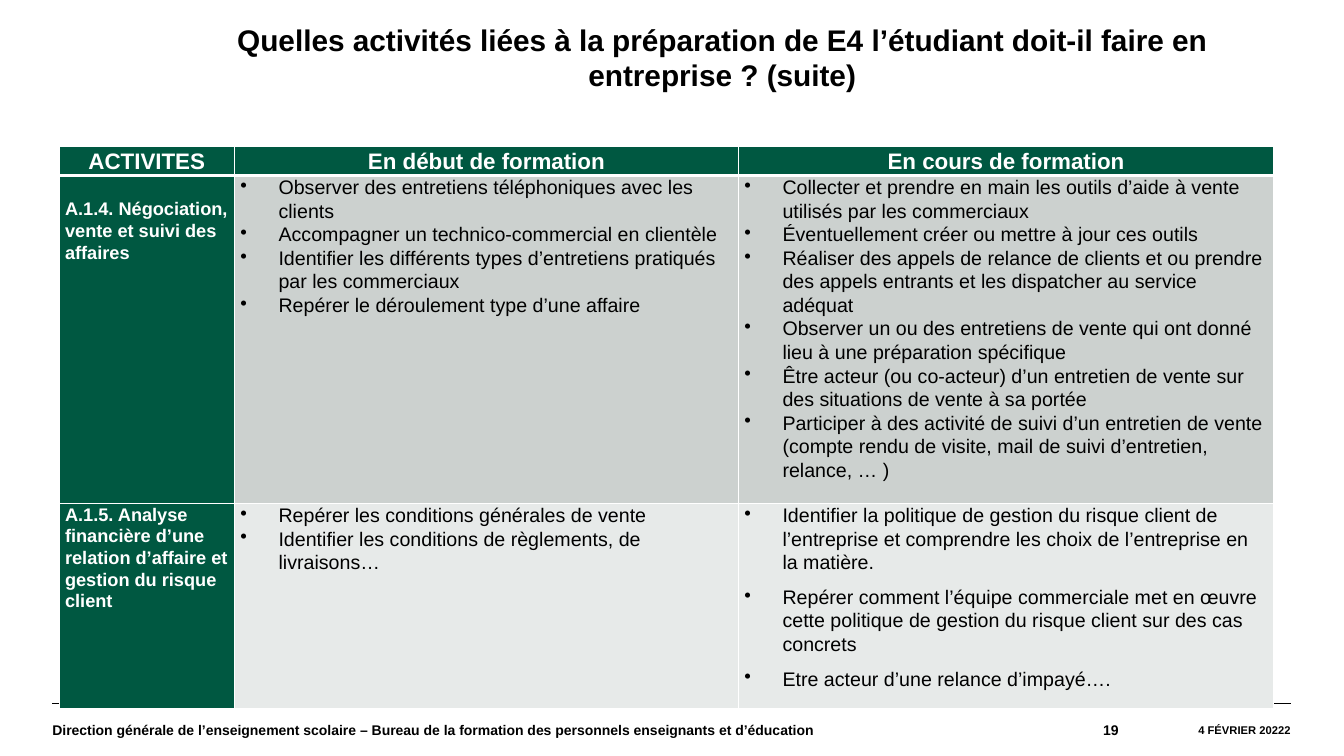
import pptx
import pptx.util
import pptx.dml.color
import pptx.enum.shapes
import pptx.enum.text
import pptx.oxml
import pptx.oxml.ns
from pptx.util import Cm

COLORS = {
    "black": "000000",
    "white": "FFFFFF",
    "green": "005841",
    "row_dark": "CCD1CF",
    "row_light": "E7EAE9",
}
ALIGN = pptx.enum.text.PP_ALIGN
ANCHOR = pptx.enum.text.MSO_ANCHOR

TITLE = (
    "Quelles activités liées à la préparation de E4 l’étudiant "
    "doit-il faire en entreprise ? (suite)"
)
FOOTER = (
    "Direction générale de l’enseignement scolaire – "
    "Bureau de la formation des personnels enseignants et d’éducation"
)
HEADINGS = ["ACTIVITES", "En début de formation", "En cours de formation"]
NEGOTIATION_START = [
    "Observer des entretiens téléphoniques avec les clients",
    "Accompagner un technico-commercial en clientèle",
    "Identifier les différents types d’entretiens pratiqués par les commerciaux",
    "Repérer le déroulement type d’une affaire",
]
NEGOTIATION_DURING = [
    "Collecter et prendre en main les outils d’aide à vente utilisés par les commerciaux",
    "Éventuellement créer ou mettre à jour ces outils",
    "Réaliser des appels de relance de clients et ou prendre des appels entrants "
    "et les dispatcher au service adéquat",
    "Observer un ou des entretiens de vente qui ont donné lieu à une préparation spécifique",
    "Être acteur (ou co-acteur) d’un entretien de vente sur des situations de vente à sa portée",
    "Participer à des activité de suivi d’un entretien de vente "
    "(compte rendu de visite, mail de suivi d’entretien, relance, … )",
]
RISK_START = [
    "Repérer les conditions générales de vente",
    "Identifier les conditions de règlements, de livraisons…",
]
RISK_DURING = [
    "Identifier la politique de gestion du risque client de l’entreprise "
    "et comprendre les choix de l’entreprise en la matière.",
    "Repérer comment l’équipe commerciale met en œuvre cette politique "
    "de gestion du risque client sur des cas concrets",
    "Etre acteur d’une relance d’impayé….",
]
ACTIVITIES = [
    ("A.1.4. Négociation, vente et suivi des affaires",
     NEGOTIATION_START, NEGOTIATION_DURING, 0, "row_dark", 0.57),
    ("A.1.5. Analyse financière d’une relation d’affaire et gestion du risque client",
     RISK_START, RISK_DURING, 8, "row_light", 0),
]


def rgb(color):
    return pptx.dml.color.RGBColor.from_string(COLORS[color])


def format_spans(para, size, color, bold):
    for span in para.runs:
        span.font.name = "Arial"
        span.font.size = pptx.util.Pt(size)
        span.font.bold = bold
        span.font.color.rgb = rgb(color)


def add_text(page, left, top, width, height, text, size, align, anchor, margins):
    box = page.shapes.add_textbox(Cm(left), Cm(top), Cm(width), Cm(height))
    frame = box.text_frame
    frame.word_wrap = True
    frame.vertical_anchor = anchor
    frame.margin_left = frame.margin_right = Cm(margins[0])
    frame.margin_top = frame.margin_bottom = Cm(margins[1])
    frame.text = text
    para = frame.paragraphs[0]
    para.alignment = align
    format_spans(para, size, "black", True)


def add_footer_line(page):
    line = page.shapes.add_connector(
        pptx.enum.shapes.MSO_CONNECTOR.STRAIGHT, Cm(1.32), Cm(17.73), Cm(32.53), Cm(17.73)
    )
    line.line.color.rgb = rgb("black")
    line.line.width = pptx.util.Pt(0.8)
    line._element.spPr.append(pptx.oxml.parse_xml(
        f'<a:effectLst {pptx.oxml.ns.nsdecls("a")}/>'
    ))


def set_borders(cell, widths):
    properties = cell._tc.get_or_add_tcPr()
    for index, (side, width) in enumerate(widths.items()):
        properties.insert(index, pptx.oxml.parse_xml(
            f'<a:ln{side} {pptx.oxml.ns.nsdecls("a")} w="{pptx.util.Pt(width)}">'
            f'<a:solidFill><a:srgbClr val="{COLORS["white"]}"/></a:solidFill></a:ln{side}>'
        ))


def add_bullet(para):
    properties = para._p.get_or_add_pPr()
    properties.set("marL", str(Cm(0.96)))
    properties.set("indent", str(-Cm(0.96)))
    properties.append(pptx.oxml.parse_xml(
        f'<a:buChar {pptx.oxml.ns.nsdecls("a")} char="•"/>'
    ))


def fill_cell(cell, lines, size, color, fill, bold=True, align=ALIGN.LEFT,
              bullets=False, after=0, top=0, anchor=ANCHOR.TOP, edges=(1, 1)):
    cell.fill.solid()
    cell.fill.fore_color.rgb = rgb(fill)
    set_borders(cell, {"L": 1, "R": 1, "T": edges[0], "B": edges[1]})
    cell.margin_left = cell.margin_right = Cm(0.15)
    cell.margin_top = Cm(top)
    cell.margin_bottom = 0
    cell.vertical_anchor = anchor
    cell.text_frame.text = "\n".join(lines)
    for para in cell.text_frame.paragraphs:
        if bullets:
            add_bullet(para)
        para.alignment = align
        para.line_spacing = 1.07
        para.space_after = pptx.util.Pt(after)
        format_spans(para, size, color, bold)


def add_activities_table(page):
    widths = [4.42, 12.7, 13.49]
    heights = [0.74, 8.26, 5.18]
    table = page.shapes.add_table(
        len(heights), len(widths), Cm(1.49), Cm(3.68), Cm(sum(widths)), Cm(sum(heights))
    ).table
    table.horz_banding = False
    for column, width in zip(table.columns, widths):
        column.width = Cm(width)
    for row, height in zip(table.rows, heights):
        row.height = Cm(height)
    for column, heading in enumerate(HEADINGS):
        fill_cell(table.cell(0, column), [heading], 16, "white", "green",
                  align=ALIGN.CENTER, anchor=ANCHOR.MIDDLE, edges=(1, 3))
    for row, (name, start, during, after, fill, top) in enumerate(ACTIVITIES, 1):
        edges = (3 if row == 1 else 1, 1)
        fill_cell(table.cell(row, 0), [name], 13, "white", "green", top=top, edges=edges)
        for column, lines in enumerate((start, during), 1):
            fill_cell(table.cell(row, column), lines, 14, "black", fill, bold=False,
                      bullets=True, after=after if column == 2 else 0, edges=edges)


def add_footer(page):
    items = [
        (1.32, 21.87, FOOTER, 10, ALIGN.LEFT),
        (23.19, 5, "19", 10, ALIGN.RIGHT),
        (28.19, 4.34, "4 FÉVRIER 20222", 8, ALIGN.RIGHT),
    ]
    for left, width, text, size, align in items:
        add_text(page, left, 17.73, width, 1.32, text, size, align, ANCHOR.MIDDLE, (0, 0))


def main():
    deck = pptx.Presentation()
    deck.slide_width = Cm(33.87)
    deck.slide_height = Cm(19.05)
    page = deck.slides.add_slide(deck.slide_layouts[6])
    add_footer_line(page)
    add_text(page, 3.86, 0.41, 28.68, 3, TITLE, 21.3, ALIGN.CENTER, ANCHOR.TOP, (0.25, 0.13))
    add_activities_table(page)
    add_footer(page)
    deck.save("out.pptx")


if __name__ == "__main__":
    main()
